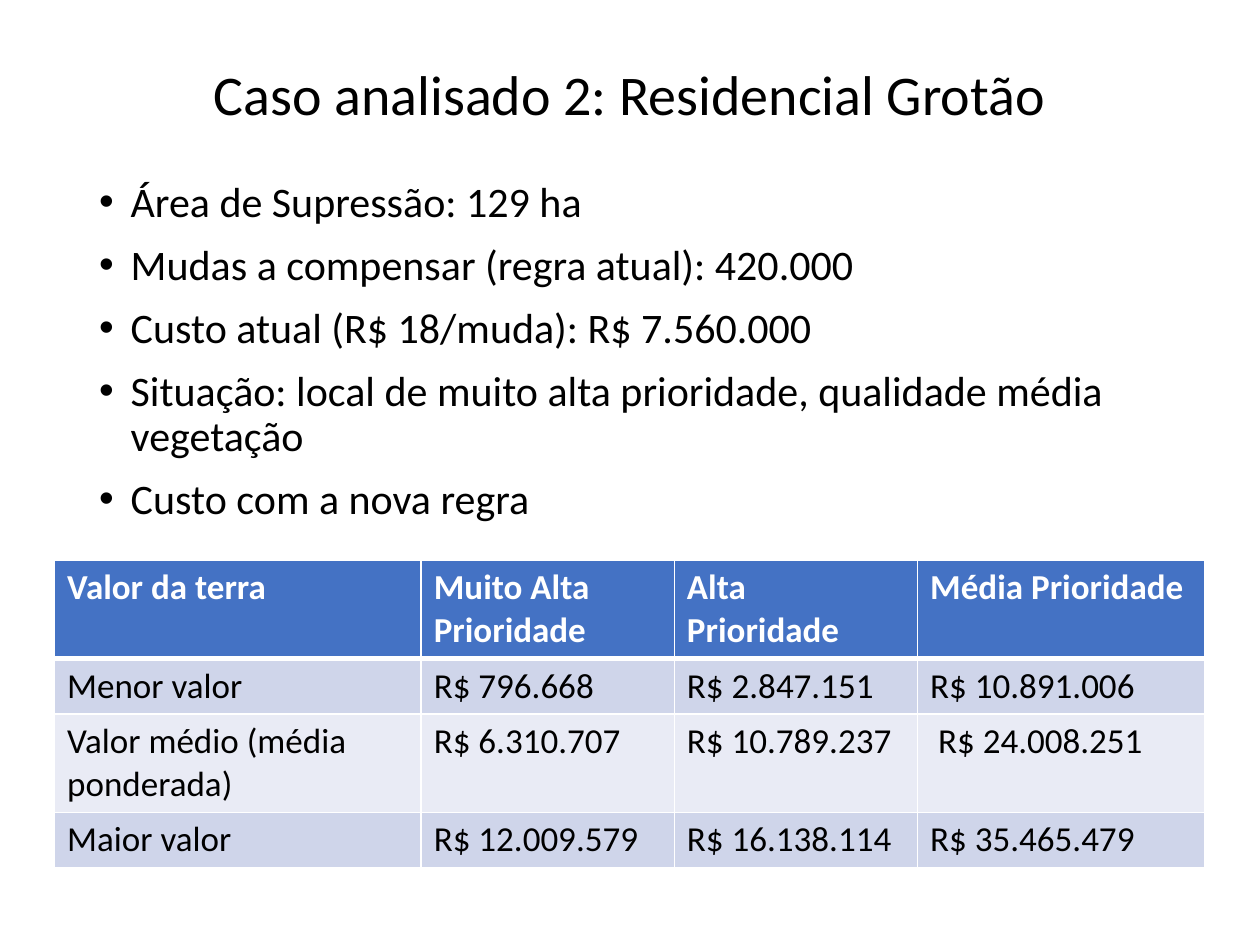
from lxml.etree import SubElement
from pptx import Presentation
from pptx.dml.color import RGBColor
from pptx.enum.text import MSO_ANCHOR, MSO_AUTO_SIZE, PP_ALIGN
from pptx.oxml.ns import qn
from pptx.util import Pt

COLORS = {
    "text": "000000",
    "white": "FFFFFF",
    "header": "4472C4",
    "odd_row": "CFD5EA",
    "even_row": "E9EBF5",
}
TITLE = "Caso analisado 2: Residencial Grotão"
BULLETS = [
    "Área de Supressão: 129 ha",
    "Mudas a compensar (regra atual): 420.000",
    "Custo atual (R$ 18/muda): R$ 7.560.000",
    "Situação: local de muito alta prioridade, qualidade média vegetação",
    "Custo com a nova regra",
]
COSTS = [
    ["Valor da terra", "Muito Alta Prioridade", "Alta Prioridade", "Média Prioridade"],
    ["Menor valor", "R$ 796.668", "R$ 2.847.151", "R$ 10.891.006"],
    ["Valor médio (média ponderada)", "R$ 6.310.707", "R$ 10.789.237", " R$ 24.008.251"],
    ["Maior valor", "R$ 12.009.579", "R$ 16.138.114", "R$ 35.465.479"],
]
COLUMN_WIDTHS = [209.5, 144.7, 139, 164.2]
ROW_HEIGHT = 29.5


def apply(target, values):
    for name, value in values.items():
        setattr(target, name, value)


class SlideBuilder:
    font = "Calibri"

    def __init__(self, page):
        self.page = page

    def add_text(self, para, text, size, color="text", bold=False, **format_values):
        apply(para, format_values)
        span = para.add_run()
        span.text = text
        apply(span.font, {"name": self.font, "size": Pt(size), "bold": bold})
        span.font.color.rgb = RGBColor.from_string(COLORS[color])

    def place(self, box, left, top, width, height, anchor):
        apply(box, {"left": Pt(left), "top": Pt(top), "width": Pt(width), "height": Pt(height)})
        apply(box.text_frame, {
            "word_wrap": True,
            "auto_size": MSO_AUTO_SIZE.NONE,
            "vertical_anchor": anchor,
        })

    def title(self, text, *area):
        box = self.page.shapes.title
        self.place(box, *area, MSO_ANCHOR.MIDDLE)
        self.add_text(box.text_frame.paragraphs[0], text, 32,
                      alignment=PP_ALIGN.CENTER, line_spacing=0.9)

    def bullets(self, items, *area):
        box = self.page.placeholders[1]
        self.place(box, *area, MSO_ANCHOR.TOP)
        frame = box.text_frame
        for index, item in enumerate(items):
            para = frame.add_paragraph() if index else frame.paragraphs[0]
            self.add_text(para, item, 24, line_spacing=0.9,
                          space_before=Pt(10), space_after=Pt(0))
            properties = para._p.get_or_add_pPr()
            properties.set("marL", str(Pt(18)))
            properties.set("indent", str(Pt(-18)))
            SubElement(properties, qn("a:buFont"), typeface="Arial")
            SubElement(properties, qn("a:buChar"), char="•")

    def borders(self, cell, widths):
        properties = cell._tc.get_or_add_tcPr()
        for index, (side, width) in enumerate(widths.items()):
            line = SubElement(properties, qn(f"a:ln{side}"), w=str(Pt(width)))
            fill = SubElement(line, qn("a:solidFill"))
            SubElement(fill, qn("a:srgbClr"), val=COLORS["white"])
            # Border lines must come before the cell fill
            properties.insert(index, line)

    def table(self, rows, widths, left, top):
        grid = self.page.shapes.add_table(
            len(rows), len(widths), Pt(left), Pt(top),
            Pt(sum(widths)), Pt(ROW_HEIGHT * len(rows))).table
        for column, width in zip(grid.columns, widths):
            column.width = Pt(width)
        for row_index, row in enumerate(rows):
            header = row_index == 0
            grid.rows[row_index].height = Pt(ROW_HEIGHT)
            band = "header" if header else "odd_row" if row_index % 2 else "even_row"
            for column_index, text in enumerate(row):
                cell = grid.cell(row_index, column_index)
                cell.fill.solid()
                cell.fill.fore_color.rgb = RGBColor.from_string(COLORS[band])
                self.add_text(cell.text_frame.paragraphs[0], text, 20,
                              "white" if header else "text", header)
                self.borders(cell, {"L": 1, "R": 1, "T": 3 if row_index == 1 else 1,
                                    "B": 3 if header else 1})


def main():
    deck = Presentation()
    apply(deck, {"slide_width": Pt(720), "slide_height": Pt(540)})
    builder = SlideBuilder(deck.slides.add_slide(deck.slide_layouts[1]))

    # Heading and case facts
    builder.title(TITLE, 49.5, 28.75, 621, 54)
    builder.bullets(BULLETS, 49.5, 100, 621, 440)

    # Cost by land value and priority
    builder.table(COSTS, COLUMN_WIDTHS, 31.2, 320)

    deck.save("out.pptx")


if __name__ == "__main__":
    main()
